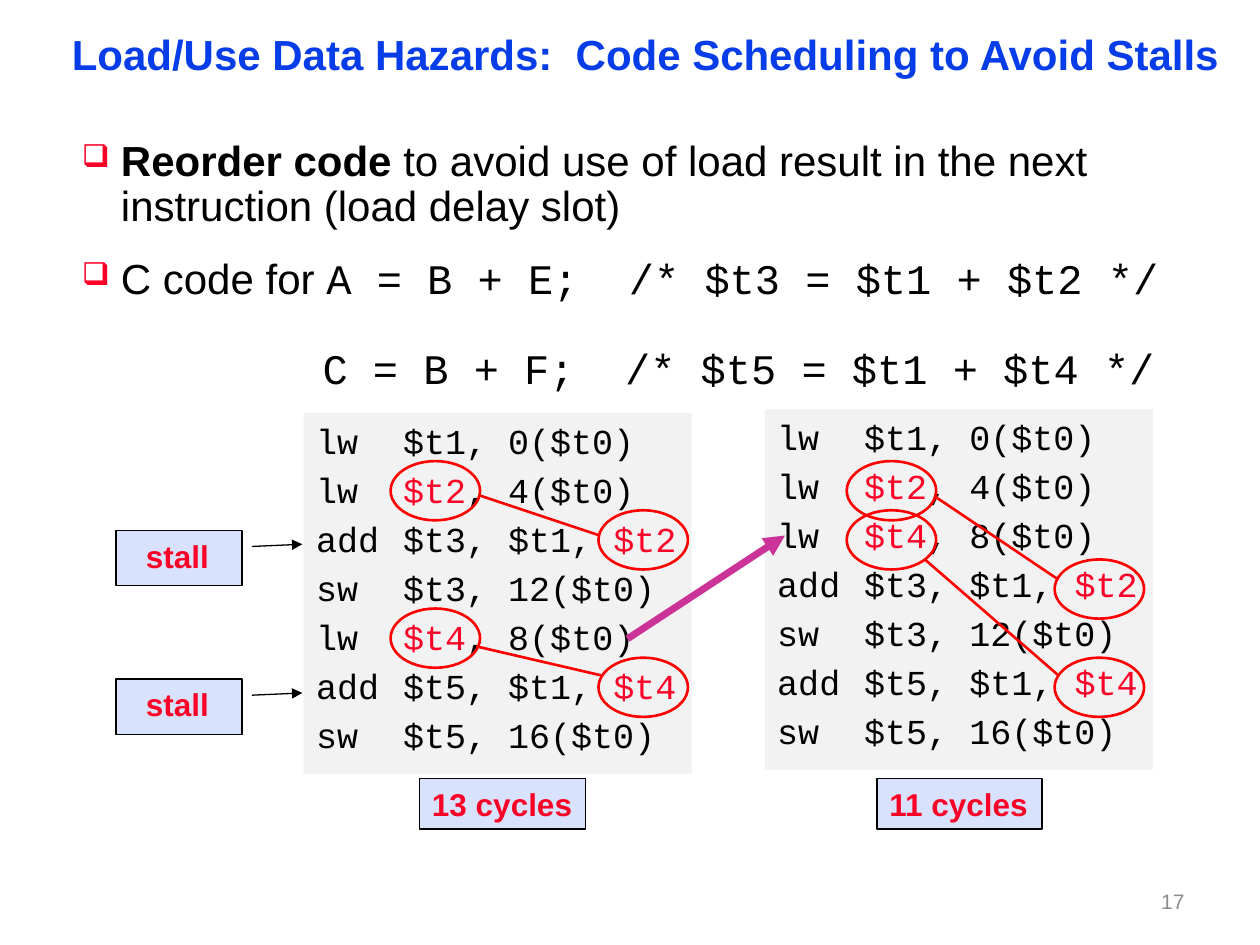
from lxml import etree
from pptx import Presentation
from pptx.dml.color import RGBColor
from pptx.enum.shapes import MSO_CONNECTOR, MSO_SHAPE
from pptx.enum.text import MSO_ANCHOR, PP_ALIGN
from pptx.oxml.ns import qn
from pptx.util import Inches, Pt

RECT, OVAL, CALL = MSO_SHAPE.RECTANGLE, MSO_SHAPE.OVAL, MSO_SHAPE.LINE_CALLOUT_1
LINE = MSO_CONNECTOR.STRAIGHT
TOP, MID = MSO_ANCHOR.TOP, MSO_ANCHOR.MIDDLE
LEFT, RIGHT = PP_ALIGN.LEFT, PP_ALIGN.RIGHT
BLACK, RED, RING, PALE = "000000", "FC0128", "FF0000", "D9E2FC"
SANS, MONO = "Arial", "Courier New"

prs = Presentation()
prs.slide_width, prs.slide_height = Inches(10), Inches(7.5)
slide = prs.slides.add_slide(prs.slide_layouts[6])
shapes = slide.shapes


def paint(fmt, color):
    """Give a fill, line or font colour; None means no paint."""
    if color is None:
        fmt.background()
    elif hasattr(fmt, "solid"):
        fmt.solid()
        fmt.fore_color.rgb = RGBColor.from_string(color)
    else:
        fmt.color.rgb = RGBColor.from_string(color)


def write(par, runs, size):
    """Add runs of (text, font, colour, bold) to a paragraph."""
    for text, name, color, bold in runs:
        run = par.add_run()
        run.text = text
        look = {"name": name, "size": Pt(size), "bold": bold}
        for key, val in look.items():
            setattr(run.font, key, val)
        paint(run.font, color)


# Title, body and page number boxes
frames = []
for x, y, w, h, pad, anchor in [
    (0.5, 0.25, 9.5, 0.58, (0.07, 0.03), TOP),
    (0.58, 1.08, 9.05, 1.77, (0.07, 0.03), TOP),
    (7.17, 6.95, 2.33, 0.4, (0.1, 0.05), MID),
]:
    frame = shapes.add_textbox(*map(Inches, (x, y, w, h))).text_frame
    side, end = map(Inches, pad)
    style = {"word_wrap": True, "vertical_anchor": anchor, "margin_left": side,
             "margin_right": side, "margin_top": end, "margin_bottom": end}
    for key, val in style.items():
        setattr(frame, key, val)
    frames.append(frame)
title, body, page = frames

head = title.paragraphs[0]
head.line_spacing = 0.87
write(head, [("Load/Use Data Hazards:  Code Scheduling to Avoid Stalls",
              SANS, "063DE8", True)], 24)
page.paragraphs[0].alignment = RIGHT
write(page.paragraphs[0], [("17", SANS, "8C8C8C", False)], 12)

# Body: two bullets, then the second C statement under the first
points = [
    [("Reorder code ", SANS, BLACK, True),
     ("to avoid use of load result in the next instruction (load delay slot)",
      SANS, BLACK, False)],
    [("C code for ", SANS, BLACK, False),
     ("A = B + E;  /* $t3 = $t1 + $t2 */", MONO, BLACK, False)],
    [("C = B + F;  /* $t5 = $t1 + $t4 */", MONO, BLACK, False)],
]
for i, runs in enumerate(points):
    par = body.paragraphs[0] if i == 0 else body.add_paragraph()
    par.line_spacing = 0.9
    props = par._p.get_or_add_pPr()
    if i < 2:
        props.set("marL", str(Inches(0.31)))
        props.set("indent", str(-Inches(0.31)))
        gap = etree.SubElement(props, qn("a:spcBef"))
        etree.SubElement(gap, qn("a:spcPct"), val="65000")
        tint = etree.SubElement(props, qn("a:buClr"))
        etree.SubElement(tint, qn("a:srgbClr"), val=RED)
        etree.SubElement(props, qn("a:buSzPct"), val="75000")
        etree.SubElement(props, qn("a:buChar"), char="❑")
    else:
        props.set("marL", str(Inches(1.91)))
        par.space_before = Pt(25.5)
    write(par, runs, 24)

# Code panels: bars enclose the registers in red
before = ["lw\t$t1, 0($t0)", "lw\t|$t2|, 4($t0)", "add\t$t3, $t1, |$t2|",
          "sw\t$t3, 12($t0)", "lw\t|$t4|, 8($t0)", "add\t$t5, $t1, |$t4|",
          "sw\t$t5, 16($t0)"]
after = before[:2] + [before[4]] + before[2:4] + before[5:]
for x, y, code in [(2.41, 3.28, before), (6.07, 3.25, after)]:
    box = shapes.add_shape(RECT, *map(Inches, (x, y, 3.08, 2.86)))
    box.shadow.inherit = False
    paint(box.fill, "F2F2F2")
    paint(box.line.fill, None)
    frame = box.text_frame
    frame.word_wrap, frame.vertical_anchor = False, TOP
    for i, text in enumerate(code):
        par = frame.paragraphs[0] if i == 0 else frame.add_paragraph()
        par.alignment = LEFT
        props = par._p.get_or_add_pPr()
        gap = etree.SubElement(props, qn("a:spcBef"))
        etree.SubElement(gap, qn("a:spcPct"), val="20000")
        tabs = etree.SubElement(props, qn("a:tabLst"))
        etree.SubElement(tabs, qn("a:tab"), pos=str(Inches(0.69)), algn="l")
        write(par, [(part, MONO, RED if n % 2 else BLACK, False)
                    for n, part in enumerate(text.split("|")) if part], 20)

# Rings around the dependent registers, by code row
for x, row in [(3.1, 1), (4.75, 2), (3.1, 4), (4.75, 5),
               (6.72, 1), (6.72, 2), (8.37, 3), (8.37, 5)]:
    ring = shapes.add_shape(OVAL, *map(Inches, (x, 3.27 + 0.39 * row, 0.71, 0.47)))
    ring.shadow.inherit = False
    paint(ring.fill, None)
    paint(ring.line, RING)
    ring.line.width = Pt(1.5)

# Dependence lines and the arrow for the moved load
for x1, y1, x2, y2, color, width in [
    (3.8, 3.93, 4.76, 4.25, RING, 1.5),
    (3.78, 5.13, 4.77, 5.36, RING, 1.5),
    (7.42, 3.94, 8.4, 4.6, RING, 1.5),
    (7.34, 4.44, 8.4, 5.36, RING, 1.5),
    (4.98, 5.07, 6.23, 4.25, "CC3399", 4),
]:
    link = shapes.add_connector(LINE, *map(Inches, (x1, y1, x2, y2)))
    paint(link.line, color)
    link.line.width = Pt(width)
    if color != RING:
        etree.SubElement(link.line._get_or_add_ln(), qn("a:tailEnd"), type="triangle")
    etree.SubElement(link._element.spPr, qn("a:effectLst"))

# Stall callouts and cycle counts
for kind, x, y, w, h, text in [
    (CALL, 0.92, 4.21, 1, 0.44, "stall"),
    (CALL, 0.92, 5.39, 1, 0.44, "stall"),
    (RECT, 3.33, 6.18, 1.32, 0.4, "13 cycles"),
    (RECT, 6.96, 6.18, 1.31, 0.4, "11 cycles"),
]:
    tag = shapes.add_shape(kind, *map(Inches, (x, y, w, h)))
    paint(tag.fill, PALE)
    paint(tag.line, BLACK)
    tag.line.width = Pt(0.75)
    frame = tag.text_frame
    frame.word_wrap, frame.vertical_anchor = kind == CALL, TOP
    par = frame.paragraphs[0]
    par.alignment = LEFT
    if kind == CALL:
        for n, val in enumerate((0.29, 1.08, 0.25, 1.48)):
            tag.adjustments[n] = val
        etree.SubElement(tag.line._get_or_add_ln(), qn("a:tailEnd"), type="triangle")
        par._p.get_or_add_pPr().set("marL", str(Inches(0.14)))
    tag.shadow.inherit = False
    write(par, [(text, SANS, RED, True)], 18)

prs.save("out.pptx")
